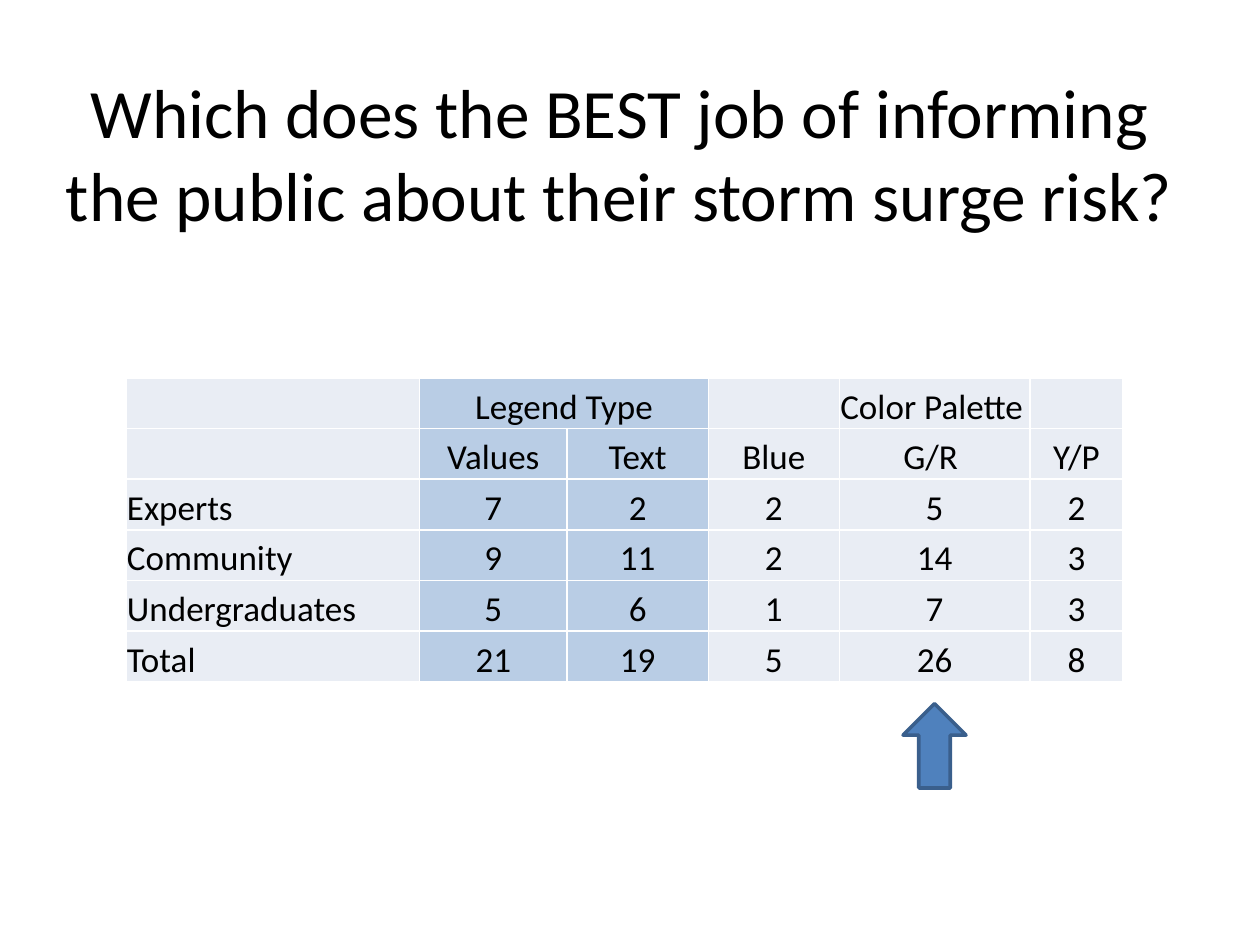
import dataclasses

import lxml.etree
import pptx
import pptx.dml.color
import pptx.enum.shapes
import pptx.enum.text
import pptx.oxml.ns
import pptx.util

Cm = pptx.util.Cm
Pt = pptx.util.Pt
Align = pptx.enum.text.PP_ALIGN
Anchor = pptx.enum.text.MSO_ANCHOR


@dataclasses.dataclass(frozen=True)
class Theme:
    font: str = "Calibri"
    ink: str = "000000"
    pale: str = "E9EDF4"
    band: str = "B9CDE5"
    rule: str = "FFFFFF"
    arrow: str = "4F81BD"
    edge: str = "3A5F8C"
    head: float = 39.6
    body: float = 20


THEME = Theme()
TITLE = "Which does the BEST job of informing the public about their storm surge risk?"
WIDTHS = (5.92, 2.97, 2.85, 2.64, 3.84, 1.88)
HEIGHT = 1.02
BANDED = (1, 2)
ROWS = (
    ("", "Legend Type", "", "", "Color Palette", ""),
    ("", "Values", "Text", "Blue", "G/R ", "Y/P"),
    ("Experts", "7", "2", "2", "5", "2"),
    ("Community", "9", "11", "2", "14", "3"),
    ("Undergraduates", "5", "6", "1", "7", "3"),
    ("Total", "21", "19", "5", "26", "8"),
)


def color(code):
    return pptx.dml.color.RGBColor.from_string(code)


def paint(fill, code):
    fill.solid()
    fill.fore_color.rgb = color(code)


def add_run(frame, text, size, align):
    para = frame.paragraphs[0]
    para.alignment = align
    run = para.add_run()
    run.text = text
    run.font.name = THEME.font
    run.font.size = Pt(size)
    run.font.color.rgb = color(THEME.ink)


def add_title(slide):
    box = slide.shapes.add_textbox(Cm(0.85), Cm(1.48), Cm(23.28), Cm(3.18))
    frame = box.text_frame
    frame.word_wrap = True
    frame.vertical_anchor = Anchor.MIDDLE
    add_run(frame, TITLE, THEME.head, Align.CENTER)


def add_rules(cell):
    props = cell._tc.get_or_add_tcPr()
    name = pptx.oxml.ns.qn
    for side in "LRTB":
        line = lxml.etree.SubElement(props, name(f"a:ln{side}"), w=str(Pt(1)))
        fill = lxml.etree.SubElement(line, name("a:solidFill"))
        lxml.etree.SubElement(fill, name("a:srgbClr"), val=THEME.rule)


def fill_cell(cell, text, col):
    add_rules(cell)
    paint(cell.fill, THEME.band if col in BANDED else THEME.pale)
    cell.vertical_anchor = Anchor.BOTTOM
    cell.margin_left = cell.margin_right = cell.margin_top = Cm(0.02)
    cell.margin_bottom = 0
    if text:
        left = col == 0 or text == "Color Palette"
        align = Align.LEFT if left else Align.CENTER
        add_run(cell.text_frame, text, THEME.body, align)


def add_grid(slide):
    frame = slide.shapes.add_table(
        len(ROWS), len(WIDTHS), Cm(2.54), Cm(7.62),
        Cm(sum(WIDTHS)), Cm(HEIGHT * len(ROWS)))
    table = frame.table
    table.first_row = table.horz_banding = False
    for col, width in zip(table.columns, WIDTHS):
        col.width = Cm(width)
    for row, texts in enumerate(ROWS):
        table.rows[row].height = Cm(HEIGHT)
        for col, text in enumerate(texts):
            fill_cell(table.cell(row, col), text, col)
    table.cell(0, 1).merge(table.cell(0, 2))


def add_arrow(slide):
    arrow = slide.shapes.add_shape(
        pptx.enum.shapes.MSO_SHAPE.RIGHT_ARROW,
        Cm(17.99), Cm(14.4), Cm(1.7), Cm(1.27))
    arrow.rotation = 270
    arrow.shadow.inherit = False
    paint(arrow.fill, THEME.arrow)
    paint(arrow.line.fill, THEME.edge)
    arrow.line.width = Pt(2)


def main():
    deck = pptx.Presentation()
    deck.slide_width, deck.slide_height = Cm(25.4), Cm(19.05)
    slide = deck.slides.add_slide(deck.slide_layouts[6])
    add_title(slide)
    add_grid(slide)
    add_arrow(slide)
    deck.save("out.pptx")


if __name__ == "__main__":
    main()
